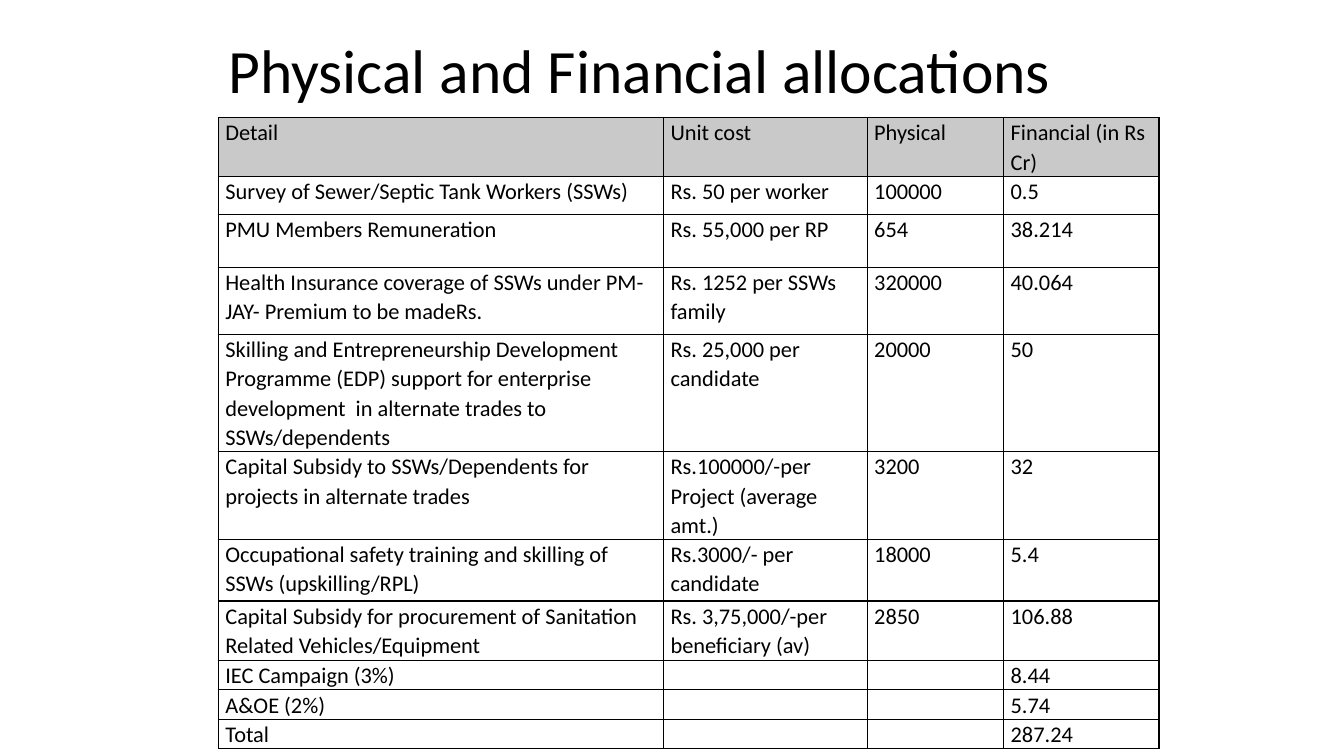
"""Build the slide with the physical and financial allocations table."""
from dataclasses import dataclass

from lxml import etree
from pptx import Presentation
from pptx.dml.color import RGBColor
from pptx.enum import text
from pptx.oxml import ns
from pptx.util import Pt


@dataclass(frozen=True)
class Theme:
    font: str = "Calibri"
    ink: str = "000000"
    header: str = "C9C9C9"
    title_size: int = 44
    cell_size: int = 16
    border: int = 1


theme = Theme()


def style_run(r, size):
    r.font.name = theme.font
    r.font.size = Pt(size)
    r.font.bold = False
    r.font.color.rgb = RGBColor.from_string(theme.ink)


def add_borders(cell):
    tc_pr = cell._tc.get_or_add_tcPr()
    for side in ("lnL", "lnR", "lnT", "lnB"):
        ln = etree.SubElement(tc_pr, ns.qn(f"a:{side}"), w=str(Pt(theme.border)))
        fill = etree.SubElement(ln, ns.qn("a:solidFill"))
        etree.SubElement(fill, ns.qn("a:srgbClr"), val=theme.ink)


rows = [
    ("Detail", "Unit cost", "Physical", "Financial (in Rs Cr)"),
    ("Survey of Sewer/Septic Tank Workers (SSWs)", "Rs. 50 per worker", "100000", "0.5"),
    ("PMU Members Remuneration", "Rs. 55,000 per RP", "654", "38.214"),
    ("Health Insurance coverage of SSWs under PM-JAY- Premium to be madeRs.",
     "Rs. 1252 per SSWs family", "320000", "40.064"),
    ("Skilling and Entrepreneurship Development Programme (EDP) support for enterprise "
     "development  in alternate trades to SSWs/dependents",
     "Rs. 25,000 per candidate", "20000", "50"),
    ("Capital Subsidy to SSWs/Dependents for projects in alternate trades",
     "Rs.100000/-per Project (average amt.)", "3200", "32"),
    ("Occupational safety training and skilling of SSWs (upskilling/RPL)",
     "Rs.3000/- per candidate", "18000", "5.4"),
    ("Capital Subsidy for procurement of Sanitation Related Vehicles/Equipment",
     "Rs. 3,75,000/-per beneficiary (av)", "2850", "106.88"),
    ("IEC Campaign (3%)", "", "", "8.44"),
    ("A&OE (2%)", "", "", "5.74"),
    ("Total", "", "", "287.24"),
]
col_widths = [318, 145.5, 97.5, 111]
row_heights = [24.5, 27.5, 37.5, 48, 65, 41, 44, 42.5, 20, 20, 20]

prs = Presentation()
prs.slide_width, prs.slide_height = Pt(960), Pt(540)
s = prs.slides.add_slide(prs.slide_layouts[6])

frame = s.shapes.add_table(len(rows), len(col_widths), Pt(156), Pt(84),
                           Pt(sum(col_widths)), Pt(sum(row_heights)))
table = frame.table
table.first_row = table.horz_banding = False
for column, width in zip(table.columns, col_widths):
    column.width = Pt(width)
for row, height in zip(table.rows, row_heights):
    row.height = Pt(height)

for i, values in enumerate(rows):
    for j, value in enumerate(values):
        cell = table.cell(i, j)
        cell.margin_left = cell.margin_right = Pt(5)
        cell.margin_top = cell.margin_bottom = 0
        add_borders(cell)
        if i == 0:
            cell.fill.solid()
            cell.fill.fore_color.rgb = RGBColor.from_string(theme.header)
        else:
            cell.fill.background()
        cell.text_frame.text = value
        p = cell.text_frame.paragraphs[0]
        p.line_spacing = 1.07
        p.space_after = Pt(8)
        for r in p.runs:
            style_run(r, theme.cell_size)
        if not value:
            etree.SubElement(p._p, ns.qn("a:endParaRPr"), sz=str(theme.cell_size * 100))

title = s.shapes.add_textbox(Pt(156), Pt(21.5), Pt(648), Pt(62.5))
tf = title.text_frame
tf.word_wrap = True
tf.vertical_anchor = text.MSO_ANCHOR.MIDDLE
tf.text = "Physical and Financial allocations"
p = tf.paragraphs[0]
p.line_spacing = 0.9
style_run(p.runs[0], theme.title_size)

prs.save("out.pptx")
